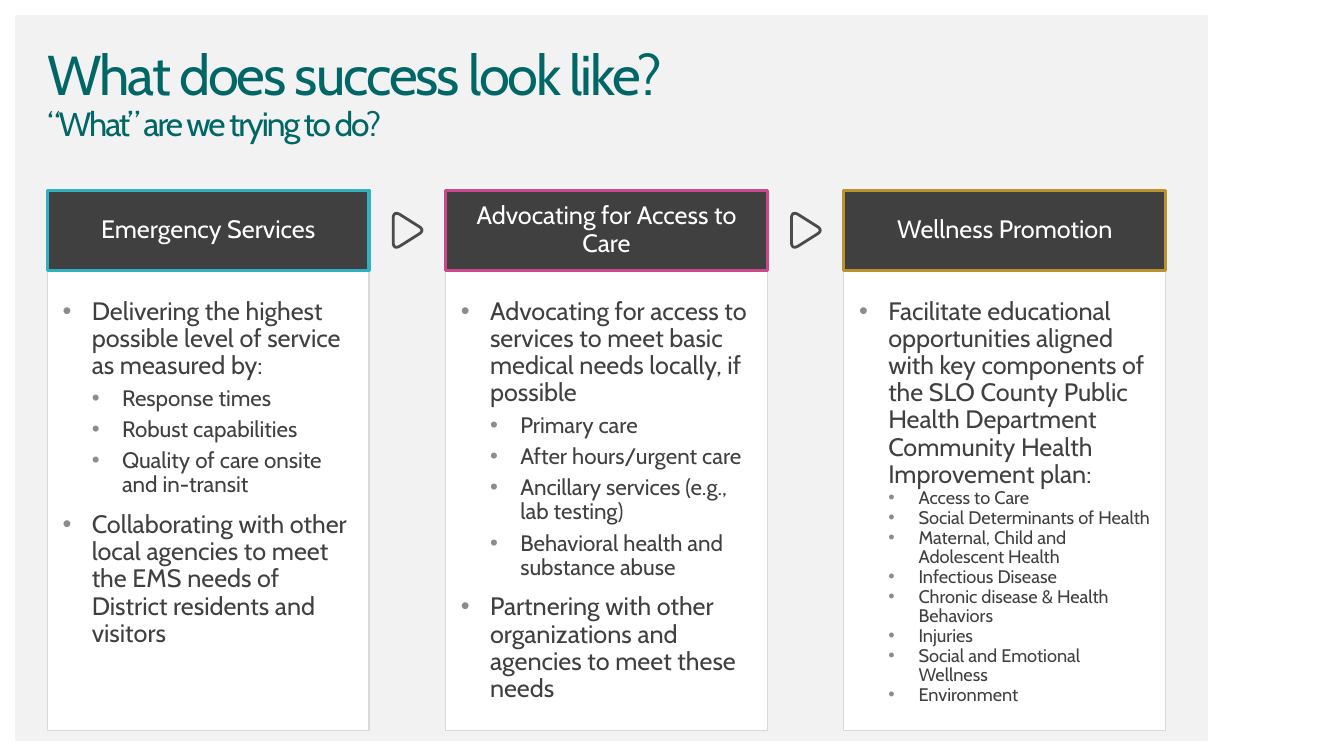
from copy import deepcopy

from lxml import etree
from pptx import Presentation
from pptx.dml.color import RGBColor
from pptx.enum import shapes, text
from pptx.oxml import ns
from pptx.util import Inches, Pt

FONT = "Cabin"
COLORS = {
    "background": "F2F2F2",
    "white": "FFFFFF",
    "title": "006666",
    "dark": "404040",
    "bullet": "8C8C8C",
    "arrow": "4B4B4B",
    "border": "D9D9D9",
}
COLUMNS = [
    ("Emergency Services", "31B0C1", 16, 5, [
        (0, "Delivering the highest possible level of service as measured by:"),
        (1, "Response times"),
        (1, "Robust capabilities"),
        (1, "Quality of care onsite and in-transit"),
        (0, "Collaborating with other local agencies to meet the EMS needs of "
            "District residents and visitors"),
    ]),
    ("Advocating for Access to Care", "CB488B", 16, 5, [
        (0, "Advocating for access to services to meet basic medical needs "
            "locally, if possible"),
        (1, "Primary care"),
        (1, "After hours/urgent care"),
        (1, "Ancillary services (e.g., lab testing)"),
        (1, "Behavioral health and substance abuse"),
        (0, "Partnering with other organizations and agencies to meet these needs"),
    ]),
    ("Wellness Promotion", "BC9230", 13, 0, [
        (0, "Facilitate educational opportunities aligned with key components of "
            "the SLO County Public Health Department Community Health "
            "Improvement plan:"),
        (1, "Access to Care"),
        (1, "Social Determinants of Health"),
        (1, "Maternal, Child and Adolescent Health"),
        (1, "Infectious Disease"),
        (1, "Chronic disease & Health Behaviors"),
        (1, "Injuries"),
        (1, "Social and Emotional Wellness"),
        (1, "Environment"),
    ]),
]
COLUMN_LEFT, COLUMN_TOP, COLUMN_WIDTH, COLUMN_PITCH = 0.47, 1.89, 3.19, 3.95
HEADER_HEIGHT, BODY_HEIGHT = 0.79, 4.57


def rgb(color):
    return RGBColor.from_string(color)


def style_run(run, size, color):
    run.font.name = FONT
    run.font.size = Pt(size)
    run.font.color.rgb = rgb(color)


def set_frame(frame, margins, anchor):
    frame.word_wrap = True
    frame.auto_size = text.MSO_AUTO_SIZE.NONE
    frame.vertical_anchor = anchor
    (frame.margin_left, frame.margin_top,
     frame.margin_right, frame.margin_bottom) = map(Inches, margins)


def add_panel(slide, box, fill, line=None, line_width=0):
    panel = slide.shapes.add_shape(
        shapes.MSO_SHAPE.RECTANGLE, *map(Inches, box))
    panel.shadow.inherit = False
    panel.fill.solid()
    panel.fill.fore_color.rgb = rgb(fill)
    if line:
        panel.line.color.rgb = rgb(line)
        panel.line.width = Pt(line_width)
    else:
        panel.line.fill.background()
    return panel


def add_margins(slide, width, height):
    edge, right = 0.15, 1.35
    for box in [(0, 0, width, edge), (0, 0, edge, height),
                (width - right, 0, right, height),
                (0, height - edge, width, edge)]:
        add_panel(slide, box, COLORS["white"])


def add_title(slide, box):
    title = slide.shapes.title
    title.left, title.top, title.width, title.height = map(Inches, box)
    set_frame(title.text_frame, (0, 0, 0, 0), text.MSO_ANCHOR.MIDDLE)
    heading = title.text_frame.paragraphs[0]
    heading.text = "What does success look like?\v“What” are we trying to do?"
    heading.alignment = text.PP_ALIGN.LEFT
    heading.line_spacing = 0.9
    for run, size in zip(heading.runs, (40, 24)):
        style_run(run, size, COLORS["title"])
        run.font._element.set("spc", "-150")
    line_break = heading._p.find(ns.qn("a:br"))
    line_break.append(deepcopy(heading.runs[0].font._element))


def add_bullet(paragraph, margin, indent):
    properties = paragraph._p.get_or_add_pPr()
    properties.set("marL", str(Inches(margin)))
    properties.set("indent", str(Inches(-indent)))
    color = etree.SubElement(properties, ns.qn("a:buClr"))
    etree.SubElement(color, ns.qn("a:srgbClr"), val=COLORS["bullet"])
    etree.SubElement(properties, ns.qn("a:buFont"), typeface="Arial")
    etree.SubElement(properties, ns.qn("a:buChar"), char="•")


def add_header(slide, box, label, accent):
    header = add_panel(slide, box, COLORS["dark"], accent, 2.25)
    set_frame(header.text_frame, (0.12, 0.04, 0.12, 0.04),
              text.MSO_ANCHOR.MIDDLE)
    paragraph = header.text_frame.paragraphs[0]
    paragraph.text = label
    paragraph.alignment = text.PP_ALIGN.CENTER
    paragraph.line_spacing = 0.9
    style_run(paragraph.runs[0], 18, COLORS["white"])


def add_body(slide, box, goals, detail_size, detail_space):
    body = add_panel(slide, box, COLORS["white"], COLORS["border"], 0.75)
    frame = body.text_frame
    set_frame(frame, (0.15, 0.28, 0.15, 0), text.MSO_ANCHOR.TOP)
    levels = [(0.29, 0.29, 18, 10), (0.59, 0.3, detail_size, detail_space)]
    for index, (level, goal) in enumerate(goals):
        margin, indent, size, space = levels[level]
        paragraph = frame.add_paragraph() if index else frame.paragraphs[0]
        paragraph.text = goal
        paragraph.level = level
        paragraph.alignment = text.PP_ALIGN.LEFT
        add_bullet(paragraph, margin, indent)
        paragraph.line_spacing = 0.9
        paragraph.space_before = Pt(space if index else 0)
        style_run(paragraph.runs[0], size, COLORS["dark"])


def add_column(slide, left, top, column):
    label, accent, detail_size, detail_space, goals = column
    add_body(slide, (left, top + HEADER_HEIGHT, COLUMN_WIDTH, BODY_HEIGHT),
             goals, detail_size, detail_space)
    add_header(slide, (left, top, COLUMN_WIDTH, HEADER_HEIGHT), label, accent)


def add_arrow(slide, left, top):
    corners = [((0, 0.04), (0, -0.04), (0.07, 0)),
               ((0.26, 0.12), (0.31, 0.155), (0.26, 0.19)),
               ((0.07, 0.31), (0, 0.35), (0, 0.27))]
    steps = 8
    outline = []
    for start, control, end in corners:
        for step in range(steps + 1):
            t = step / steps
            x, y = ((1 - t) ** 2 * a + 2 * t * (1 - t) * b + t ** 2 * c
                    for a, b, c in zip(start, control, end))
            outline.append((Inches(left + x), Inches(top + y)))
    builder = slide.shapes.build_freeform(*outline[0])
    builder.add_line_segments(outline[1:], close=True)
    arrow = builder.convert_to_shape()
    arrow.shadow.inherit = False
    arrow.fill.background()
    arrow.line.color.rgb = rgb(COLORS["arrow"])
    arrow.line.width = Pt(2)


def main():
    deck = Presentation()
    deck.slide_width, deck.slide_height = Inches(13.33), Inches(7.5)
    slide = deck.slides.add_slide(deck.slide_layouts[5])
    slide.background.fill.solid()
    slide.background.fill.fore_color.rgb = rgb(COLORS["background"])
    add_margins(slide, 13.33, 7.5)
    add_title(slide, (COLUMN_LEFT, 0.71, 11.09, 0.47))
    for index, column in enumerate(COLUMNS):
        left = COLUMN_LEFT + index * COLUMN_PITCH
        add_column(slide, left, COLUMN_TOP, column)
        if index < len(COLUMNS) - 1:
            add_arrow(slide, left + 3.43, COLUMN_TOP + 0.24)
    deck.save("out.pptx")


if __name__ == "__main__":
    main()
